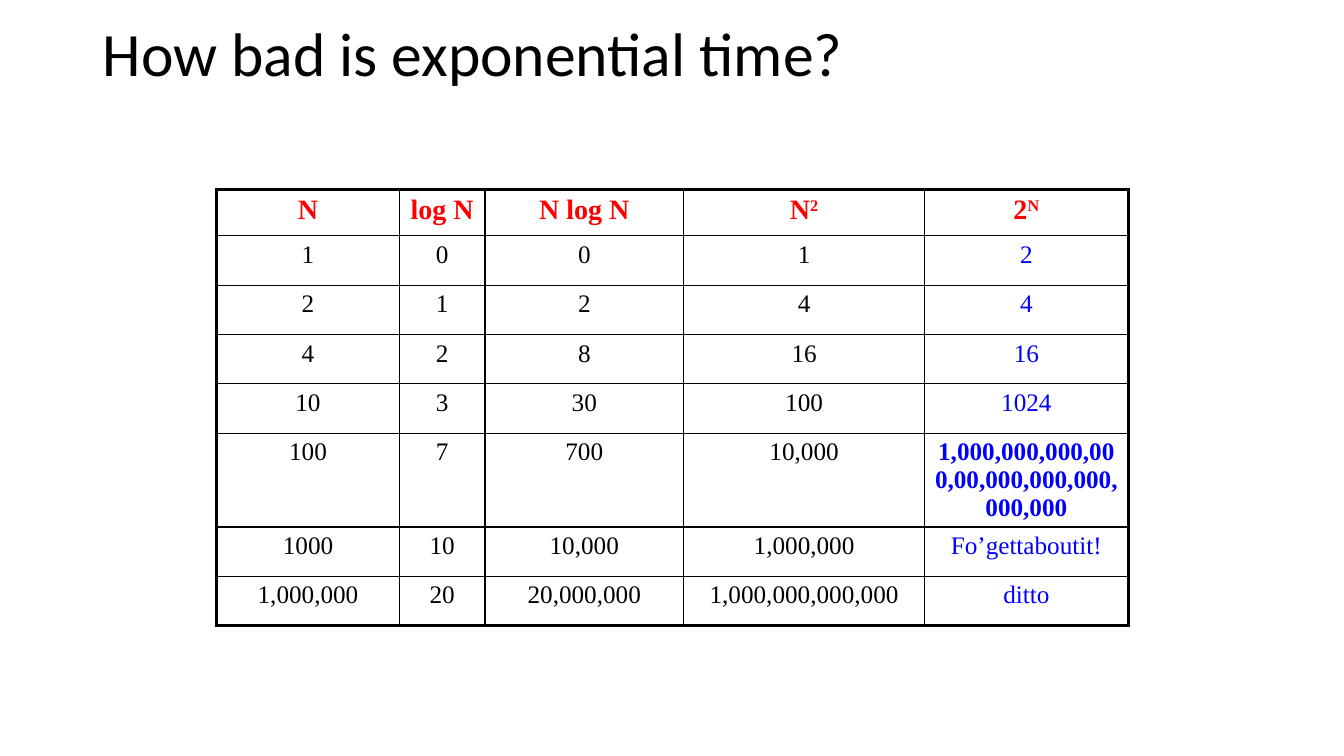
import pptx
import pptx.dml.color
import pptx.enum.text
import pptx.oxml
import pptx.oxml.ns
import pptx.util

BLACK = pptx.dml.color.RGBColor(0, 0, 0)
RED = pptx.dml.color.RGBColor(255, 0, 0)
BLUE = pptx.dml.color.RGBColor(0, 0, 255)
WIDE = pptx.util.Inches(13.33)
TALL = pptx.util.Inches(7.5)
THICK, THIN = 2.25, 1

COLS = [13.58, 6.38, 14.78, 17.93, 15.15]
ROWS = [6.13] + [6.53] * 7
HEADS = [("N", ""), ("log N", ""), ("N log N", ""), ("N", "2"), ("2", "N")]
HUGE = "1,000,000,000,000,00,000,000,000,000,000"
COSTS = [
    ["1", "0", "0", "1", "2"],
    ["2", "1", "2", "4", "4"],
    ["4", "2", "8", "16", "16"],
    ["10", "3", "30", "100", "1024"],
    ["100", "7", "700", "10,000", HUGE],
    ["1000", "10", "10,000", "1,000,000", "Fo’gettaboutit!"],
    ["1,000,000", "20", "20,000,000", "1,000,000,000,000", "ditto"],
]


def across(share):
    return round(WIDE * share / 100)


def down(share):
    return round(TALL * share / 100)


def style(run, face, size, color, bold=False):
    run.font.name = face
    run.font.size = pptx.util.Pt(size)
    run.font.color.rgb = color
    run.font.bold = bold


def add_title(slide, text):
    title = slide.shapes.title
    title.left, title.top = across(6.9), down(1.73)
    title.width, title.height = across(86.27), down(11.47)
    frame = title.text_frame
    frame.text = text
    frame.vertical_anchor = pptx.enum.text.MSO_ANCHOR.MIDDLE
    line = frame.paragraphs[0]
    line.alignment = pptx.enum.text.PP_ALIGN.LEFT
    line.line_spacing = 0.9
    style(line.runs[0], "Calibri", 44, BLACK)


def add_edges(cell, row, col):
    outer = {
        "L": col == 0,
        "R": col == len(COLS) - 1,
        "T": row == 0,
        "B": row == len(ROWS) - 1,
    }
    props = cell._tc.get_or_add_tcPr()
    for spot, (side, edge) in enumerate(outer.items()):
        width = pptx.util.Pt(THICK if edge else THIN)
        props.insert(spot, pptx.oxml.parse_xml(
            f'<a:ln{side} {pptx.oxml.ns.nsdecls("a")} w="{width}">'
            f'<a:solidFill><a:srgbClr val="{BLACK}"/></a:solidFill>'
            f'</a:ln{side}>'))


def fill_cell(cell, text, power, size, color, bold):
    cell.fill.background()
    line = cell.text_frame.paragraphs[0]
    line.text = text
    line.alignment = pptx.enum.text.PP_ALIGN.CENTER
    if power:
        raised = line.add_run()
        raised.text = power
        raised.font._element.set("baseline", "30000")
    for run in line.runs:
        style(run, "Times New Roman", size, color, bold)


def add_grid(slide):
    grid = slide.shapes.add_table(
        len(ROWS), len(COLS), across(16.13), down(25.07),
        across(sum(COLS)), down(sum(ROWS))).table
    grid.first_row = grid.horz_banding = False
    for column, share in zip(grid.columns, COLS):
        column.width = across(share)
    for row, share in zip(grid.rows, ROWS):
        row.height = down(share)
    for col, (text, power) in enumerate(HEADS):
        fill_cell(grid.cell(0, col), text, power, 20, RED, True)
    for row, costs in enumerate(COSTS, 1):
        for col, text in enumerate(costs):
            color = BLUE if col == len(COLS) - 1 else BLACK
            fill_cell(grid.cell(row, col), text, "", 18, color, text == HUGE)
    for row in range(len(ROWS)):
        for col in range(len(COLS)):
            add_edges(grid.cell(row, col), row, col)


def main():
    deck = pptx.Presentation()
    deck.slide_width, deck.slide_height = WIDE, TALL
    slide = deck.slides.add_slide(deck.slide_layouts[5])
    add_title(slide, "How bad is exponential time?")
    add_grid(slide)
    deck.save("out.pptx")


if __name__ == "__main__":
    main()
